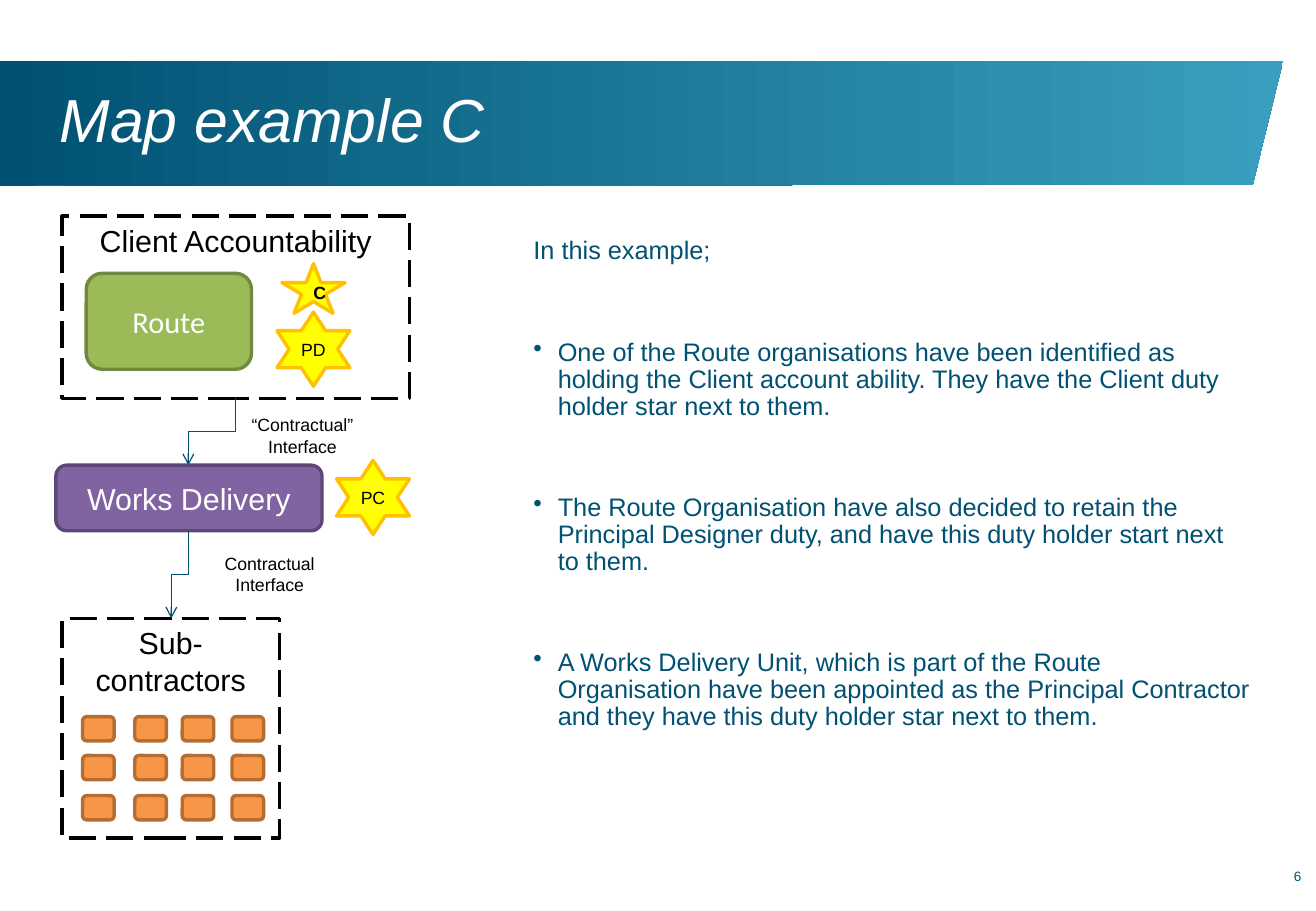
from lxml import etree
from pptx import Presentation
from pptx.dml.color import RGBColor
from pptx.enum import dml, shapes, text
from pptx.oxml import ns
from pptx.util import Inches, Pt

KIND = shapes.MSO_SHAPE
ALIGN = text.PP_ALIGN
MID, TOP = text.MSO_ANCHOR.MIDDLE, text.MSO_ANCHOR.TOP
NAVY = "005172"
tint = RGBColor.from_string

deck = Presentation()
deck.slide_width, deck.slide_height = Inches(10.83), Inches(7.5)
slide = deck.slides.add_slide(deck.slide_layouts[6])
parts = slide.shapes


def write(shape, words, size=18, color="000000", font="Arial", bold=False,
          italic=False, align=ALIGN.CENTER, anchor=MID, inset=None,
          wrap=True, lead=None, after=None, bullet=False):
    """Put one paragraph per line of words; bullet marks all but the first."""
    frame = shape.text_frame
    frame.word_wrap = wrap
    frame.vertical_anchor = anchor
    if inset is not None:
        frame.margin_left = frame.margin_right = Inches(inset)
        frame.margin_top = frame.margin_bottom = Inches(inset)
    for i, line in enumerate(words.split("\n")):
        para = frame.paragraphs[0] if i == 0 else frame.add_paragraph()
        para.alignment = align
        if lead:
            para.line_spacing = Pt(lead)
        if after:
            para.space_after = Pt(after)
        if bullet and i:
            props = para._p.get_or_add_pPr()
            props.set("marL", str(Inches(0.2)))
            props.set("indent", str(Inches(-0.2)))
            etree.SubElement(props, ns.qn("a:buChar")).set("char", "•")
        run = para.add_run()
        run.text = line
        run.font.name, run.font.size = font, Pt(size)
        run.font.bold, run.font.italic = bold, italic
        run.font.color.rgb = tint(color)


def block(kind, box, fill, edge):
    """Add a preset shape with a 2 pt edge; no fill gives a dashed frame."""
    shape = parts.add_shape(kind, *map(Inches, box))
    shape.shadow.inherit = False
    shape.line.color.rgb = tint(edge)
    shape.line.width = Pt(2)
    if fill:
        shape.fill.solid()
        shape.fill.fore_color.rgb = tint(fill)
    else:
        shape.fill.background()
        shape.line.dash_style = dml.MSO_LINE.LONG_DASH
    return shape


# Title band
path = [(Inches(x), Inches(y)) for x, y in
        [(-0.01, 0.5), (10.56, 0.5), (10.31, 1.52), (-0.01, 1.53)]]
pen = parts.build_freeform(*path[0])
pen.add_line_segments(path[1:], close=True)
band = pen.convert_to_shape()
band.shadow.inherit = False
band.line.fill.background()
band.fill.gradient()
band.fill.gradient_angle = 0
for stop, color, spot in zip(band.fill.gradient_stops, (NAVY, "3A9FBE"), (0, 1)):
    stop.color.rgb = tint(color)
    stop.position = spot

# Organisations
for kind, box, fill, edge, words, look in [
    (KIND.ROUNDED_RECTANGLE, (0.71, 2.25, 1.36, 0.79), "9BBB59", "71893F",
     "Route", dict(font="Calibri", color="FFFFFF")),
    (KIND.RECTANGLE, (0.51, 1.78, 2.86, 1.5), None, "000000",
     "Client Accountability", dict(anchor=TOP)),
    (KIND.ROUNDED_RECTANGLE, (0.46, 3.83, 2.19, 0.54), "8064A2", "5C4776",
     "Works Delivery", dict(color="FFFFFF")),
    (KIND.RECTANGLE, (0.51, 5.09, 1.79, 1.81), None, "000000",
     "Sub-contractors", dict(anchor=TOP)),
]:
    write(block(kind, box, fill, edge), words, **look)

# Duty holder stars
for kind, box, words, look in [
    (KIND.STAR_5_POINT, (2.32, 2.17, 0.52, 0.41), "C", dict(bold=True)),
    (KIND.STAR_6_POINT, (2.28, 2.57, 0.6, 0.61), "PD", dict(wrap=False)),
    (KIND.STAR_6_POINT, (2.77, 3.79, 0.6, 0.61), "PC", dict(wrap=False)),
]:
    write(block(kind, box, "FFFF00", "FFC000"), words, size=10.5, **look)

# Sub-contractor units
for y in (5.9, 6.22, 6.55):
    for x in (0.68, 1.11, 1.5, 1.91):
        block(KIND.ROUNDED_RECTANGLE, (x, y, 0.26, 0.2), "F79646", "B66D31")

# Interfaces: elbows are turned a quarter so that they leave downwards
for x, y, wide, high in [(1.47, 3.36, 0.55, 0.39), (1.12, 4.66, 0.72, 0.14)]:
    link = parts.add_connector(shapes.MSO_CONNECTOR.ELBOW, Inches(x), Inches(y),
                               Inches(x + wide), Inches(y + high))
    link.line.color.rgb = tint("004F6F")
    link.line.width = Pt(0.75)
    props = link._element.spPr
    props.xfrm.set("rot", str(90 * 60000))
    etree.SubElement(props.find(ns.qn("a:ln")), ns.qn("a:tailEnd")).set("type", "arrow")
    etree.SubElement(props, ns.qn("a:effectLst"))

# Text
points = """In this example;
One of the Route organisations have been identified as holding the Client account ability. They have the Client duty holder star next to them.
The Route Organisation have also decided to retain the Principal Designer duty, and have this duty holder start next to them.
A Works Delivery Unit, which is part of the Route Organisation have been appointed as the Principal Contractor and they have this duty holder star next to them."""
for box, words, look in [
    ((1.91, 3.36, 1.16, 0.45), "“Contractual”\nInterface", dict(size=10.5, anchor=TOP)),
    ((1.64, 4.5, 1.16, 0.45), "Contractual\nInterface", dict(size=10.5, anchor=TOP)),
    ((0.49, 0.66, 9.8, 0.7), "Map example C",
     dict(size=36, color="FFFFFF", italic=True, align=ALIGN.LEFT, inset=0, lead=38)),
    ((4.39, 1.96, 5.91, 4.92), points,
     dict(size=15, color=NAVY, align=ALIGN.LEFT, anchor=TOP, inset=0,
          lead=16, after=44, bullet=True)),
    ((10.18, 7.15, 0.53, 0.22), "6",
     dict(size=8, color=NAVY, align=ALIGN.RIGHT, anchor=TOP, inset=0)),
]:
    write(parts.add_textbox(*map(Inches, box)), words, **look)

deck.save("out.pptx")
